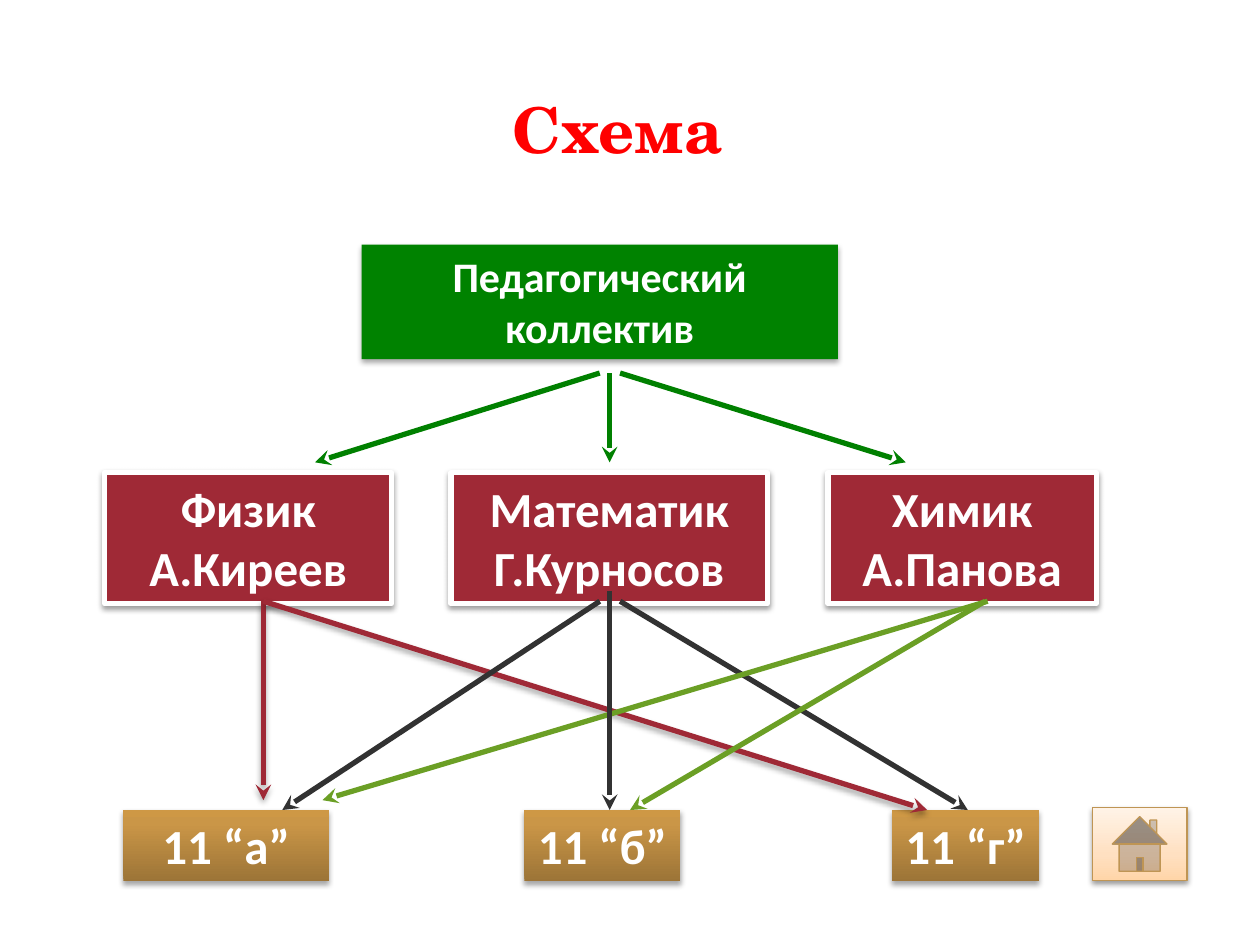
from lxml import etree
from pptx import Presentation
from pptx.dml.color import RGBColor
from pptx.enum.shapes import MSO_CONNECTOR, MSO_SHAPE as Shape
from pptx.enum.text import MSO_ANCHOR, PP_ALIGN
from pptx.oxml.ns import qn
from pptx.util import Cm, Pt

WHITE = RGBColor(0xFF, 0xFF, 0xFF)
RED = RGBColor(0xFF, 0x00, 0x00)
GREEN = RGBColor(0x00, 0x82, 0x00)
ARROW_GREEN = RGBColor(0x00, 0x80, 0x00)
MAROON = RGBColor(0x9F, 0x29, 0x36)
DARK = RGBColor(0x32, 0x32, 0x32)
LIME = RGBColor(0x6B, 0x9F, 0x25)
TAN = RGBColor(0xBF, 0x95, 0x54)
BRONZE_STOPS = [
    (0, RGBColor(0x9C, 0x74, 0x37)),
    (80, RGBColor(0xCA, 0x96, 0x47)),
    (100, RGBColor(0xCE, 0x98, 0x45)),
]
PEACH_STOPS = [
    (0, RGBColor(0xFF, 0xD5, 0xA8)),
    (35, RGBColor(0xFF, 0xE0, 0xC1)),
    (100, RGBColor(0xFF, 0xF3, 0xE7)),
]


def add_shadow(effects, distance, opacity):
    shadow = etree.SubElement(
        effects, qn("a:outerShdw"), blurRad="40000", dist=str(Pt(distance)),
        dir="5400000", rotWithShape="0")
    color = etree.SubElement(shadow, qn("a:srgbClr"), val="000000")
    etree.SubElement(color, qn("a:alpha"), val=str(opacity * 1000))


def set_gradient(fill, sp, stops):
    fill.gradient()
    fill.gradient_angle = 90
    gs_list = sp._element.spPr.find(".//" + qn("a:gsLst"))
    for gs in list(gs_list):
        gs_list.remove(gs)
    for position, color in stops:
        gs = etree.SubElement(gs_list, qn("a:gs"), pos=str(position * 1000))
        etree.SubElement(gs, qn("a:srgbClr"), val=str(color))


def write(sp, text, size, color=WHITE, font="Calibri", wrap=True):
    tf = sp.text_frame
    tf.word_wrap = wrap
    tf.text = text
    p = tf.paragraphs[0]
    p.alignment = PP_ALIGN.CENTER
    p.font.size = Pt(size)
    p.font.bold = True
    p.font.name = font
    p.font.color.rgb = color
    return tf


def add_box(slide, box, fill, text=None, size=28, line=None, line_width=3,
            kind=Shape.RECTANGLE, wrap=True):
    sp = slide.shapes.add_shape(kind, *map(Cm, box))
    if isinstance(fill, RGBColor):
        sp.fill.solid()
        sp.fill.fore_color.rgb = fill
    else:
        set_gradient(sp.fill, sp, fill)
    if line is None:
        sp.line.fill.background()
    else:
        sp.line.color.rgb = line
        sp.line.width = Pt(line_width)
    sp.shadow.inherit = False
    distance, opacity = (1.8, 35) if line is None else (1.6, 38)
    add_shadow(sp._element.spPr.find(qn("a:effectLst")), distance, opacity)
    if text:
        write(sp, text, size, wrap=wrap).vertical_anchor = MSO_ANCHOR.TOP


def add_arrow(slide, start, end, color, shadow=False):
    line = slide.shapes.add_connector(
        MSO_CONNECTOR.STRAIGHT, *map(Cm, (*start, *end)))
    line.line.color.rgb = color
    line.line.width = Pt(3)
    etree.SubElement(line.line._get_or_add_ln(), qn("a:tailEnd"), type="stealth")
    effects = etree.SubElement(line._element.spPr, qn("a:effectLst"))
    if shadow:
        add_shadow(effects, 1.8, 35)


def add_title(slide):
    sp = slide.shapes.add_textbox(Cm(7.54), Cm(1.4), Cm(9.83), Cm(2.39))
    tf = write(sp, "Схема", 36, RED, "TeX Gyre Schola", wrap=False)
    tf.vertical_anchor = MSO_ANCHOR.MIDDLE


def main():
    prs = Presentation()
    prs.slide_width, prs.slide_height = Cm(25.4), Cm(19.05)
    slide = prs.slides.add_slide(prs.slide_layouts[6])

    add_title(slide)
    add_box(slide, (7.29, 4.93, 9.6, 2.31), GREEN, "Педагогический коллектив", 24)
    for start, end in ((12.09, 6.35), (12.29, 12.29), (12.5, 18.26)):
        add_arrow(slide, (start, 7.52), (end, 9.32), ARROW_GREEN)

    teachers = [
        (2.11, 5.79, "Физик А.Киреев"),
        (9.09, 6.38, "Математик Г.Курносов"),
        (16.69, 5.41, "Химик А.Панова"),
    ]
    for left, width, name in teachers:
        add_box(slide, (left, 9.53, width, 2.64), MAROON, name, line=WHITE)

    classes = [
        (2.49, 4.14, "11 “а”", True),
        (10.57, 3.15, "11 “б”", False),
        (17.98, 2.97, "11 “г”", False),
    ]
    for left, width, name, wrap in classes:
        add_box(slide, (left, 16.32, width, 1.45), BRONZE_STOPS, name, wrap=wrap)

    lessons = [
        ((5.31, 12.12), (5.31, 16.13), MAROON),
        ((5.31, 12.12), (18.69, 16.33), MAROON),
        ((12.09, 12.12), (5.69, 16.33), DARK),
        ((12.5, 12.12), (19.51, 16.33), DARK),
        ((19.86, 12.12), (12.7, 16.33), LIME),
        ((19.91, 12.12), (6.5, 16.13), LIME),
        ((12.29, 11.91), (12.29, 16.33), DARK),
    ]
    for start, end, color in lessons:
        add_arrow(slide, start, end, color, shadow=color == MAROON)

    add_box(slide, (22.02, 16.28, 1.91, 1.47), PEACH_STOPS, line=TAN,
            line_width=0.75, kind=Shape.ACTION_BUTTON_HOME)
    prs.save("out.pptx")


if __name__ == "__main__":
    main()
